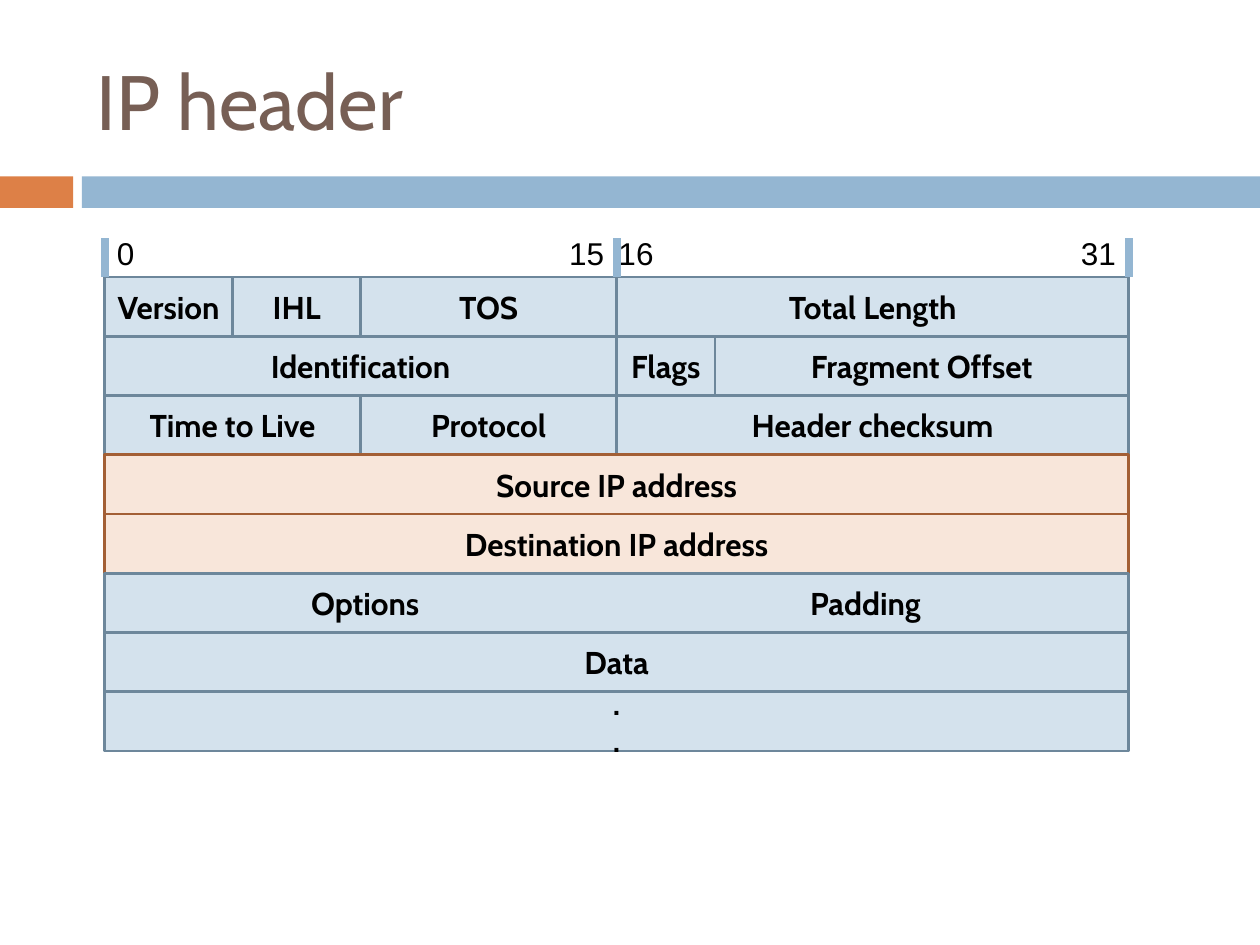
from lxml import etree
from pptx import Presentation, util as u
from pptx.dml.color import RGBColor
from pptx.enum import shapes, text
from pptx.oxml.ns import qn

HUES = {"blue": "94B6D2", "rust": "DD8047", "brown": "775F55", "ink": "000000",
        "sky": "D4E2ED", "slate": "6D879B", "peach": "F8E6DA", "clay": "A35F35"}
LEFT, TOP, BIT, ROW = 0.83, 2.2, 0.254, 0.47
FIELDS = [
    [("Version", 4), ("IHL", 4), ("TOS", 8), ("Total Length", 16)],
    [("Identification", 16), ("Flags", 3.07), ("Fragment Offset", 12.93)],
    [("Time to Live", 8), ("Protocol", 8), ("Header checksum", 16)],
    [("Source IP address", 32)],
    [("Destination IP address", 32)],
    [("\tOptions\tPadding", 32)],
    [("Data", 32)],
    [(".\n.", 32)],
]
PEACH = (3, 4)
STOPS = (1.97, 5.94)
LABELS = [("0", 0, 0.34), ("15", 14.13, 0.48), ("16", 15.67, 0.48), ("31", 30.12, 0.48)]


class Sheet:
    """Draws a packet header on a grid of bits and rows."""

    def __init__(self, deck):
        self.slide = deck.slides.add_slide(deck.slide_layouts[6])
        self.items = self.slide.shapes

    def hue(self, name):
        return RGBColor.from_string(HUES[name])

    def spot(self, bit, row):
        return u.Inches(LEFT + bit * BIT), u.Inches(TOP + row * ROW)

    def words(self, frame, words, face, size, hue, bold=False, align=None):
        frame.text = words
        for para in frame.paragraphs:
            para.alignment = align
            font = para.font
            font.name, font.size, font.bold = face, u.Pt(size), bold
            font.color.rgb = self.hue(hue)

    def rect(self, x, y, w, h, fill, edge=None):
        box = self.items.add_shape(shapes.MSO_SHAPE.RECTANGLE, x, y, w, h)
        box.shadow.inherit = False
        box.fill.solid()
        box.fill.fore_color.rgb = self.hue(fill)
        if edge:
            box.line.color.rgb = self.hue(edge)
            box.line.width = u.Pt(1.5)
        else:
            box.line.fill.background()
        return box

    def band(self, x, w, fill):
        self.rect(u.Inches(x), u.Inches(1.4), u.Inches(w), u.Inches(0.25), fill)

    def title(self, words):
        box = self.items.add_textbox(*map(u.Inches, (0.67, 0.25, 8.92, 1.08)))
        frame = box.text_frame
        frame.word_wrap = True
        frame.vertical_anchor = text.MSO_ANCHOR.MIDDLE
        self.words(frame, words, "Cabin", 44, "brown")

    def field(self, words, bit, row, bits):
        fill, edge = ("peach", "clay") if row in PEACH else ("sky", "slate")
        box = self.rect(*self.spot(bit, row), u.Inches(bits * BIT), u.Inches(ROW), fill, edge)
        frame = box.text_frame
        frame.vertical_anchor = text.MSO_ANCHOR.MIDDLE
        tabbed = "\t" in words
        align = text.PP_ALIGN.LEFT if tabbed else text.PP_ALIGN.CENTER
        self.words(frame, words, "Cabin", 18, "ink", True, align)
        if tabbed:
            self.tabs(frame.paragraphs[0])

    def tabs(self, para):
        stops = etree.Element(qn("a:tabLst"))
        for stop in STOPS:
            etree.SubElement(stops, qn("a:tab"), pos=str(u.Inches(stop)), algn="ctr")
        para._p.pPr.insert(0, stops)

    def label(self, words, bit, width):
        x, y = self.spot(bit, -0.83)
        box = self.items.add_textbox(x, y, u.Inches(width), u.Inches(0.4))
        frame = box.text_frame
        frame.word_wrap = False
        frame.auto_size = text.MSO_AUTO_SIZE.SHAPE_TO_FIT_TEXT
        self.words(frame, words, "Arial", 18, "ink")

    def mark(self, bit):
        kind = shapes.MSO_CONNECTOR.STRAIGHT
        line = self.items.add_connector(kind, *self.spot(bit, 0), *self.spot(bit, -0.66))
        line.line.color.rgb = self.hue("blue")
        line.line.width = u.Pt(4.5)
        etree.SubElement(line._element.spPr, qn("a:effectLst"))


def main():
    deck = Presentation()
    deck.slide_width, deck.slide_height = u.Inches(10), u.Inches(7.5)
    sheet = Sheet(deck)
    sheet.band(0, 0.58, "rust")
    sheet.band(0.65, 9.35, "blue")
    sheet.title("IP header")
    for row, fields in enumerate(FIELDS):
        bit = 0
        for words, bits in fields:
            sheet.field(words, bit, row, bits)
            bit += bits
    for words, bit, width in LABELS:
        sheet.label(words, bit, width)
    for bit in (0, 16, 32):
        sheet.mark(bit)
    deck.save("out.pptx")


if __name__ == "__main__":
    main()
